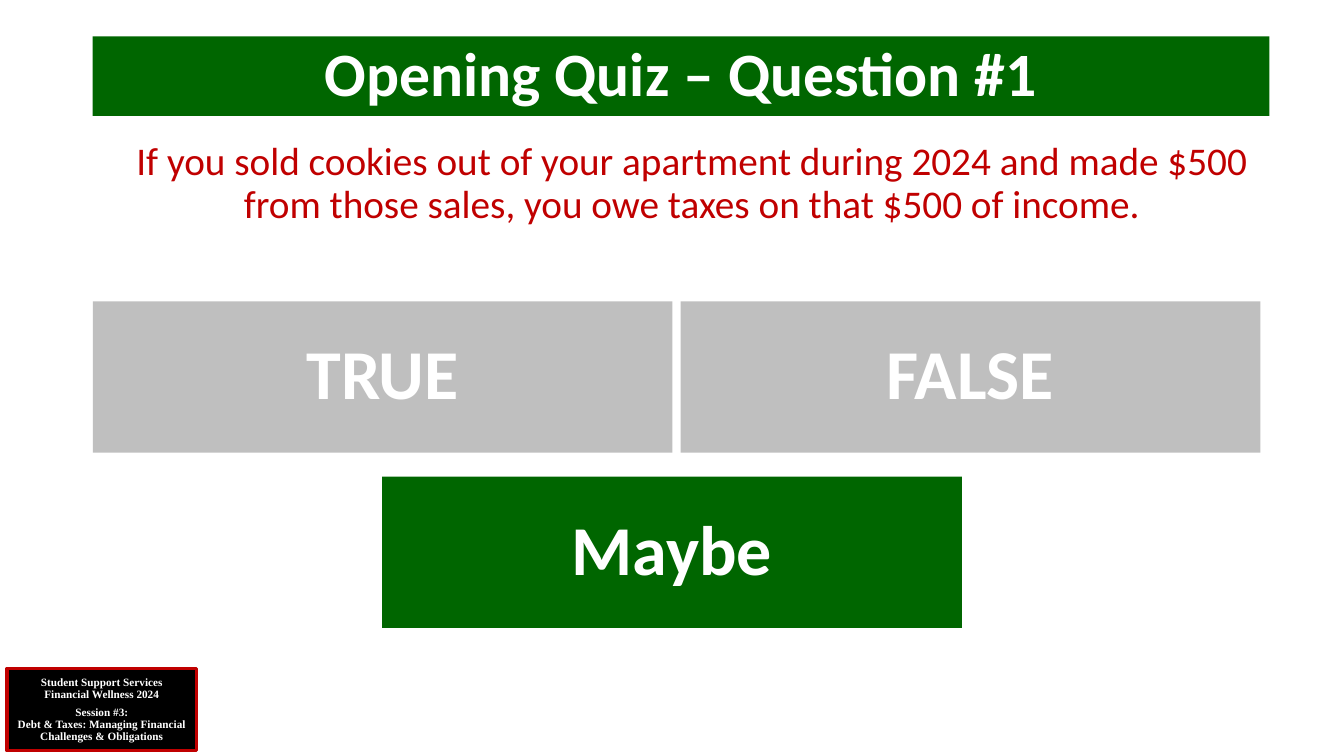
from pptx import Presentation
from pptx.dml.color import RGBColor
from pptx.enum.shapes import MSO_SHAPE
from pptx.enum.text import MSO_ANCHOR, PP_ALIGN
from pptx.util import Inches, Pt

RECT = MSO_SHAPE.RECTANGLE
TOP, MIDDLE = MSO_ANCHOR.TOP, MSO_ANCHOR.MIDDLE
CENTER = PP_ALIGN.CENTER

COLORS = {
    "green": "006600",
    "gray": "BFBFBF",
    "red": "C00000",
    "black": "000000",
    "white": "FFFFFF",
}

LEFT = 0.92
ANSWER_W, ANSWER_H = 5.75, 1.5
ANSWERS = [
    ("TRUE", LEFT, 2.99, "gray"),
    ("FALSE", 6.75, 2.99, "gray"),
    ("Maybe", 3.79, 4.73, "green"),
]
SESSION_LINES = [
    ("Student Support Services", 0),
    ("Financial Wellness 2024", 0),
    ("Session #3:", 4),
    ("Debt & Taxes: Managing Financial Challenges & Obligations", 0),
]


def rgb(name):
    return RGBColor.from_string(COLORS[name])


def write(shape, lines, size, color="white", font="Calibri", bold=True, anchor=MIDDLE):
    """Fill a shape with centred paragraphs given as (text, space before)."""
    tf = shape.text_frame
    tf.word_wrap = True
    tf.vertical_anchor = anchor
    for i, (text, space_before) in enumerate(lines):
        p = tf.paragraphs[0] if i == 0 else tf.add_paragraph()
        p.alignment = CENTER
        p.line_spacing = 0.9
        p.space_before = Pt(space_before)
        r = p.add_run()
        r.text = text
        r.font.name = font
        r.font.size = Pt(size)
        r.font.bold = bold
        r.font.color.rgb = rgb(color)


def add_box(s, left, top, width, height, fill, line=None):
    sp = s.shapes.add_shape(RECT, Inches(left), Inches(top), Inches(width), Inches(height))
    sp.shadow.inherit = False
    sp.fill.solid()
    sp.fill.fore_color.rgb = rgb(fill)
    if line:
        sp.line.color.rgb = rgb(line)
        sp.line.width = Pt(2.25)
    else:
        sp.line.fill.background()
    return sp


def main():
    prs = Presentation()
    prs.slide_width, prs.slide_height = Inches(13.33), Inches(7.5)
    s = prs.slides.add_slide(prs.slide_layouts[6])

    session = add_box(s, 0.07, 6.63, 1.88, 0.82, "black", line="red")
    write(session, SESSION_LINES, 8, font="Times New Roman")

    title = add_box(s, LEFT, 0.36, 11.67, 0.79, "green")
    write(title, [("Opening Quiz – Question #1", 0)], 44)

    question = s.shapes.add_textbox(Inches(LEFT), Inches(1.36), Inches(11.88), Inches(5.4))
    write(question, [("If you sold cookies out of your apartment during 2024 and made $500 "
                      "from those sales, you owe taxes on that $500 of income.", 0)],
          28, color="red", bold=False, anchor=TOP)

    for text, left, top, fill in ANSWERS:
        answer = add_box(s, left, top, ANSWER_W, ANSWER_H, fill)
        write(answer, [(text, 0)], 50)

    prs.save("out.pptx")


if __name__ == "__main__":
    main()
